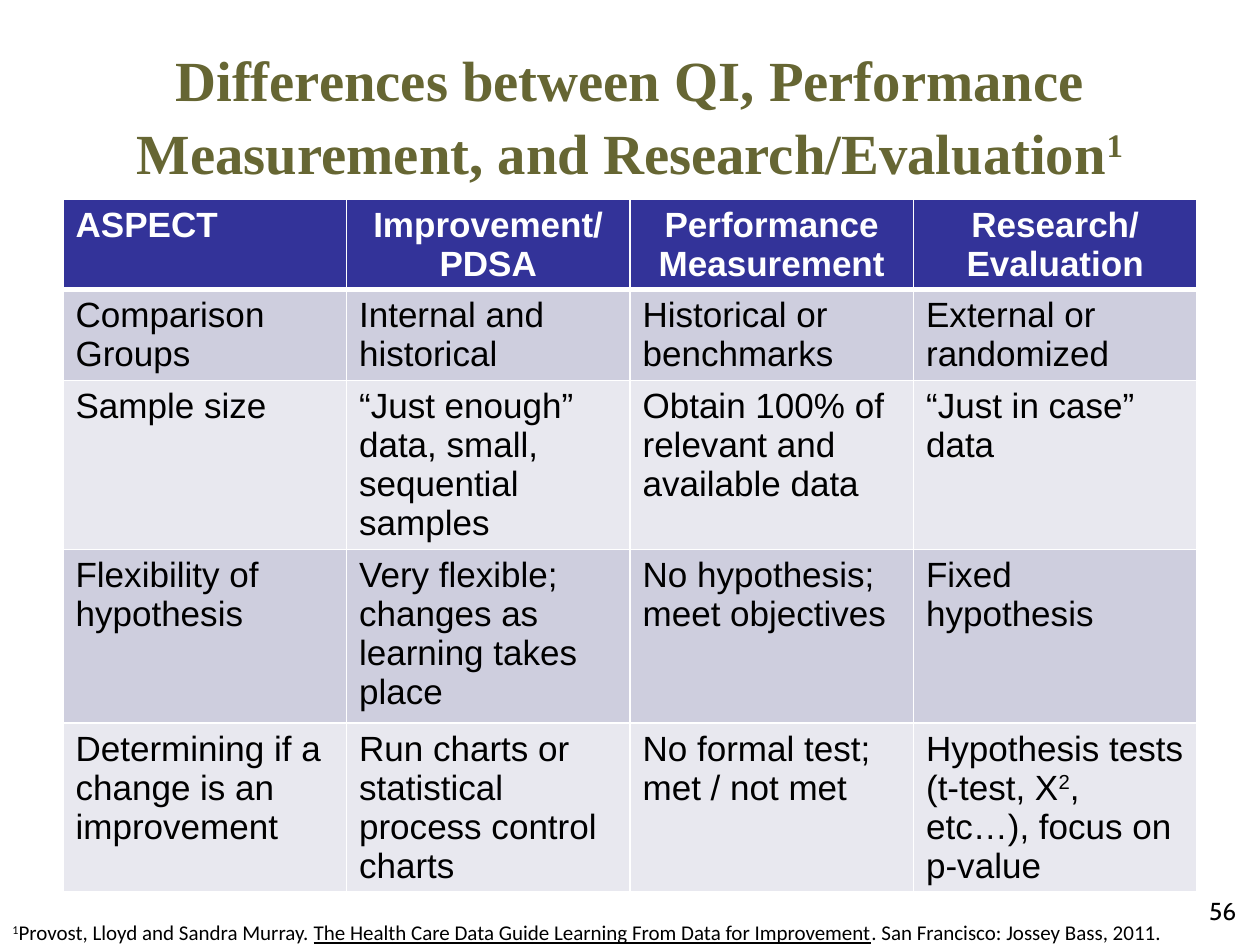
"""Build the slide comparing QI, performance measurement and research."""
import lxml.etree
import pptx
import pptx.dml.color
import pptx.enum.text
import pptx.oxml.ns
import pptx.util

Inches = pptx.util.Inches
ALIGN = pptx.enum.text.PP_ALIGN
ANCHOR = pptx.enum.text.MSO_ANCHOR

HEADER = ["ASPECT", "Improvement/\nPDSA", "Performance Measurement", "Research/ Evaluation"]
BODY = [
    ["Comparison Groups", "Internal and historical",
     "Historical or benchmarks", "External or randomized"],
    ["Sample size", "“Just enough” data, small, sequential samples",
     "Obtain 100% of relevant and available data", "“Just in case” data"],
    ["Flexibility of hypothesis", "Very flexible; changes as learning takes place",
     "No hypothesis; meet objectives", "Fixed hypothesis"],
    ["Determining if a change is an improvement",
     "Run charts or statistical process control charts",
     "No formal test; met / not met",
     "Hypothesis tests (t-test, X^2^, etc…), focus on p-value"],
]
ROW_HEIGHTS = [0.71, 0.72, 1.34, 1.38, 1.33]
BANDS = ["CECEDE", "E8E8EF"]


def color(value):
    """Return the colour for a hex string."""
    return pptx.dml.color.RGBColor.from_string(value)


def write_text(frame, text, *, font, size, fill="000000", bold=False,
               align=ALIGN.LEFT, spacing=None):
    """Fill a frame; newlines split paragraphs, ^ marks superscript, _ underline."""
    for index, line in enumerate(text.split("\n")):
        paragraph = frame.paragraphs[0] if index == 0 else frame.add_paragraph()
        paragraph.alignment = align
        paragraph.line_spacing = spacing
        for raised_index, raised_part in enumerate(line.split("^")):
            for lined_index, part in enumerate(raised_part.split("_")):
                if not part:
                    continue
                run = paragraph.add_run()
                run.text = part
                run.font.name = font
                run.font.size = pptx.util.Pt(size)
                run.font.bold = bold
                run.font.color.rgb = color(fill)
                if lined_index % 2:
                    run.font.underline = True
                if raised_index % 2:
                    run.font._element.set("baseline", "30000")


def add_title(slide, text):
    """Place and format the title placeholder."""
    title = slide.shapes.title
    title.left, title.top = Inches(0.5), Inches(0.38)
    title.width, title.height = Inches(9), Inches(1.03)
    frame = title.text_frame
    frame.word_wrap = True
    frame.auto_size = pptx.enum.text.MSO_AUTO_SIZE.NONE
    frame.vertical_anchor = ANCHOR.MIDDLE
    write_text(frame, text, font="Times New Roman", size=32.4, fill="666633",
               bold=True, align=ALIGN.CENTER, spacing=1.08)


def add_text_box(slide, left, top, width, height, text, **style):
    """Add a wrapping text box."""
    box = slide.shapes.add_textbox(Inches(left), Inches(top), Inches(width), Inches(height))
    box.text_frame.word_wrap = True
    write_text(box.text_frame, text, **style)


def set_borders(cell, **widths):
    """Draw white cell borders, with widths in points by side."""
    properties = cell._tc.get_or_add_tcPr()
    for index, side in enumerate("LRTB"):
        line = lxml.etree.Element(pptx.oxml.ns.qn("a:ln" + side),
                                  w=str(pptx.util.Pt(widths.get(side, 1))))
        fill = lxml.etree.SubElement(line, pptx.oxml.ns.qn("a:solidFill"))
        lxml.etree.SubElement(fill, pptx.oxml.ns.qn("a:srgbClr"), val="FFFFFF")
        properties.insert(index, line)


def add_comparison_table(slide):
    """Add the table with a dark header and banded rows."""
    rows = [HEADER] + BODY
    table = slide.shapes.add_table(len(rows), len(HEADER), Inches(0.5), Inches(1.58),
                                   Inches(9), Inches(sum(ROW_HEIGHTS))).table
    for row_index, (texts, height) in enumerate(zip(rows, ROW_HEIGHTS)):
        table.rows[row_index].height = Inches(height)
        is_header = row_index == 0
        for column_index, text in enumerate(texts):
            cell = table.cell(row_index, column_index)
            cell.fill.solid()
            cell.fill.fore_color.rgb = color(
                "333399" if is_header else BANDS[(row_index - 1) % 2])
            set_borders(cell, T=3 if row_index == 1 else 1, B=3 if is_header else 1)
            centered = is_header and column_index > 0
            write_text(cell.text_frame, text, font="Arial", size=20, bold=is_header,
                       fill="FFFFFF" if is_header else "000000",
                       align=ALIGN.CENTER if centered else ALIGN.LEFT)


def main():
    """Build and save the presentation."""
    presentation = pptx.Presentation()
    presentation.slide_width, presentation.slide_height = Inches(10), Inches(7.5)
    slide = presentation.slides.add_slide(presentation.slide_layouts[5])
    add_title(slide, "Differences between QI, Performance Measurement, "
                     "and Research/Evaluation^1^")
    add_comparison_table(slide)
    add_text_box(slide, 0, 7.25, 10, 0.3,
                 "^1^Provost, Lloyd and Sandra Murray. _The Health Care Data Guide Learning "
                 "From Data for Improvement_. San Francisco: Jossey Bass, 2011.",
                 font="Calibri", size=12)
    add_text_box(slide, 7.58, 7.06, 2.33, 0.52, "56", font="Cabin", size=14,
                 align=ALIGN.RIGHT)
    presentation.save("out.pptx")


if __name__ == "__main__":
    main()
